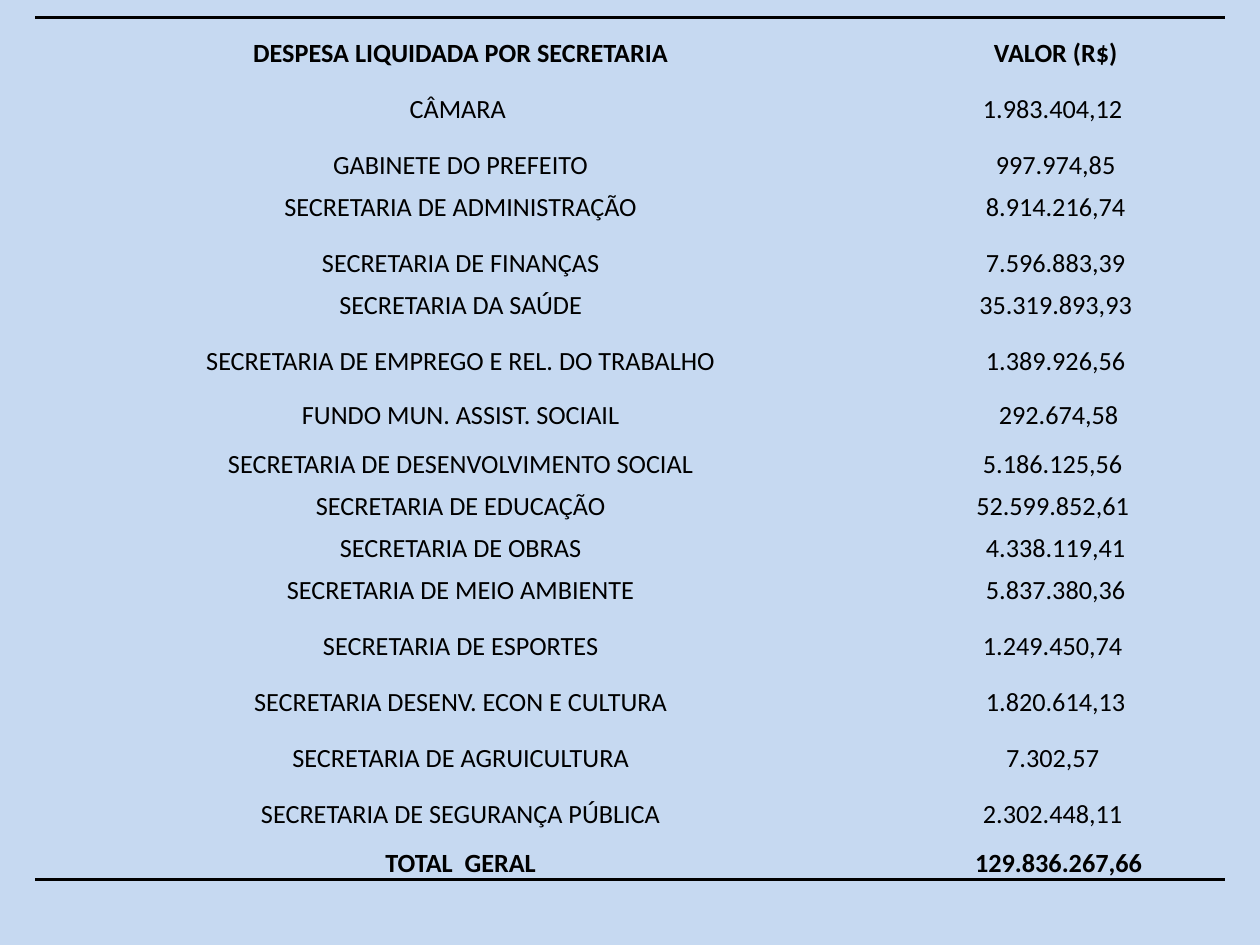
"""Build a slide with a table of settled expenses by municipal department."""
from lxml.etree import SubElement
from pptx import Presentation
from pptx.dml.color import RGBColor
from pptx.enum.text import MSO_ANCHOR as Anchor, PP_ALIGN as Align
from pptx.oxml.ns import qn
from pptx.util import Pt

BLUE, BLACK = "C6D9F1", "000000"
LEFT, TOP = 20, 10
COLUMN_WIDTHS = [486.5, 193.5]
RULE_WIDTH = 2
ROWS = [
    (30, "DESPESA LIQUIDADA POR SECRETARIA", "VALOR (R$)"),
    (32, "CÂMARA ", "1.983.404,12 "),
    (32, "GABINETE DO PREFEITO", "997.974,85"),
    (24, "SECRETARIA DE ADMINISTRAÇÃO", "8.914.216,74"),
    (32, "SECRETARIA DE FINANÇAS", "7.596.883,39"),
    (24, "SECRETARIA DA SAÚDE", "35.319.893,93"),
    (32, "SECRETARIA DE EMPREGO E REL. DO TRABALHO", " 1.389.926,56 "),
    (31, "FUNDO MUN. ASSIST. SOCIAIL", " 292.674,58"),
    (28, "SECRETARIA DE DESENVOLVIMENTO SOCIAL", "5.186.125,56 "),
    (24, "SECRETARIA DE EDUCAÇÃO", "52.599.852,61 "),
    (24, "SECRETARIA DE OBRAS", "4.338.119,41"),
    (24, "SECRETARIA DE MEIO AMBIENTE", "5.837.380,36"),
    (32, "SECRETARIA DE ESPORTES", "1.249.450,74 "),
    (32, "SECRETARIA DESENV. ECON E CULTURA", "1.820.614,13"),
    (32, "SECRETARIA DE AGRUICULTURA", "7.302,57 "),
    (32, "SECRETARIA DE SEGURANÇA PÚBLICA", "2.302.448,11 "),
    (28, "TOTAL  GERAL", " 129.836.267,66"),
]


def color(value):
    return RGBColor.from_string(value)


def set_borders(cell, ruled_side):
    properties = cell._tc.get_or_add_tcPr()
    for side in ("lnL", "lnR", "lnT", "lnB"):
        line = SubElement(properties, qn(f"a:{side}"))
        if side == ruled_side:
            line.set("w", str(Pt(RULE_WIDTH)))
            fill = SubElement(line, qn("a:solidFill"))
            SubElement(fill, qn("a:srgbClr"), val=BLACK)
        else:
            SubElement(line, qn("a:noFill"))


def fill_cell(cell, text, bold, ruled_side):
    set_borders(cell, ruled_side)
    cell.fill.solid()
    cell.fill.fore_color.rgb = color(BLUE)
    cell.margin_left = cell.margin_right = cell.margin_top = Pt(0.75)
    cell.margin_bottom = Pt(0)
    cell.vertical_anchor = Anchor.BOTTOM
    para = cell.text_frame.paragraphs[0]
    para.text = text
    para.alignment = Align.CENTER
    font = para.runs[0].font
    font.name, font.size, font.bold = "Calibri", Pt(15), bold
    font.color.rgb = color(BLACK)


def add_expense_table(page):
    height = sum(row[0] for row in ROWS)
    frame = page.shapes.add_table(
        len(ROWS), len(COLUMN_WIDTHS), Pt(LEFT), Pt(TOP), Pt(sum(COLUMN_WIDTHS)), Pt(height))
    table = frame.table
    table.first_row = table.horz_banding = False
    for column, width in zip(table.columns, COLUMN_WIDTHS):
        column.width = Pt(width)
    ruled_sides = {0: "lnT", len(ROWS) - 1: "lnB"}
    for index, (row_height, *texts) in enumerate(ROWS):
        row = table.rows[index]
        row.height = Pt(row_height)
        for cell, text in zip(row.cells, texts):
            fill_cell(cell, text, index in ruled_sides, ruled_sides.get(index))


def main():
    deck = Presentation()
    deck.slide_width, deck.slide_height = Pt(720), Pt(540)
    page = deck.slides.add_slide(deck.slide_layouts[6])
    page.background.fill.solid()
    page.background.fill.fore_color.rgb = color(BLUE)
    add_expense_table(page)
    deck.save("out.pptx")


if __name__ == "__main__":
    main()
